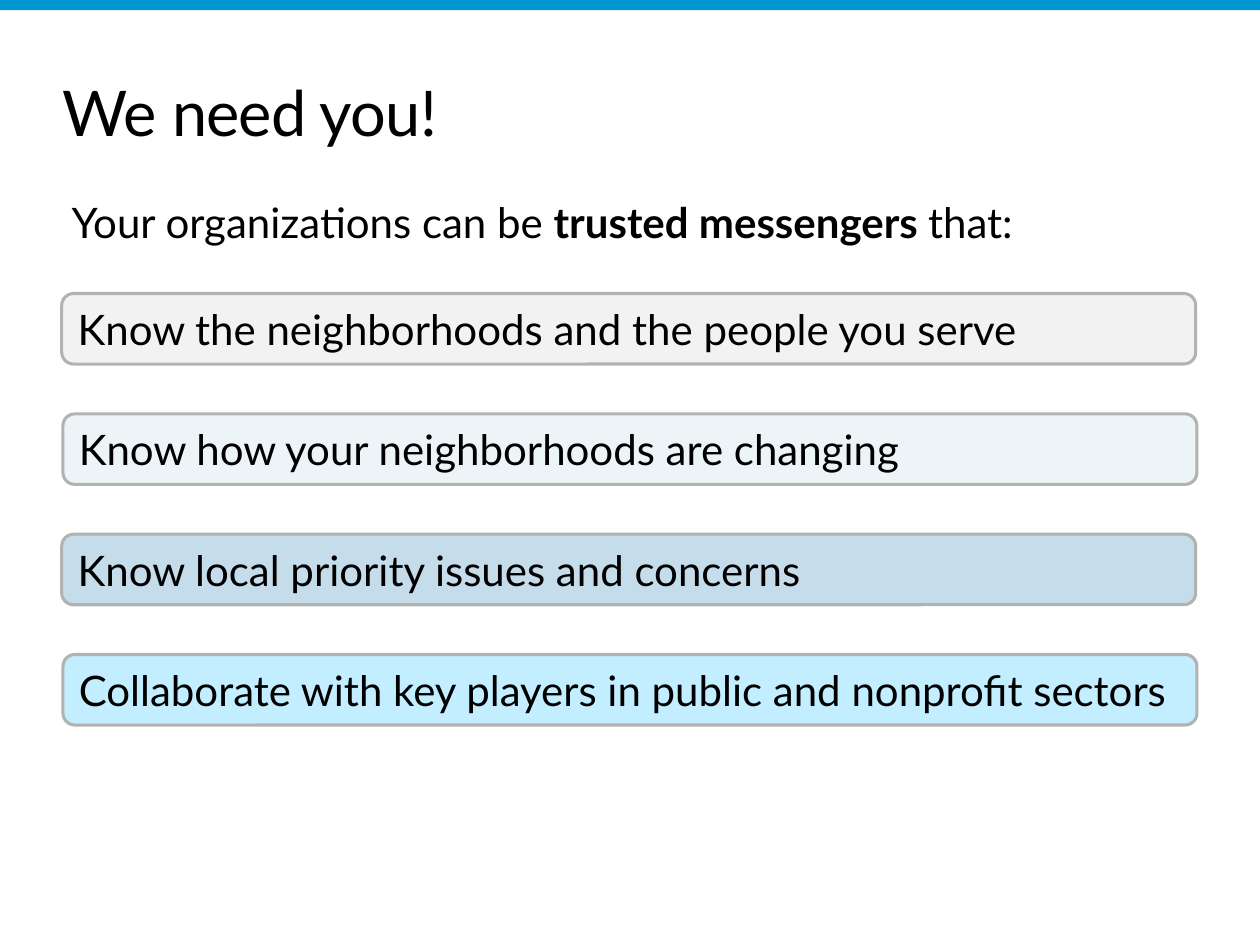
from dataclasses import dataclass

from pptx import Presentation
from pptx.dml.color import RGBColor
from pptx.enum.shapes import MSO_SHAPE
from pptx.enum.text import MSO_ANCHOR, PP_ALIGN
from pptx.util import Inches, Pt

RECT = MSO_SHAPE.RECTANGLE
ROUND = MSO_SHAPE.ROUNDED_RECTANGLE
TOP = MSO_ANCHOR.TOP
MIDDLE = MSO_ANCHOR.MIDDLE
LEFT = PP_ALIGN.LEFT


@dataclass(frozen=True)
class Theme:
    font: str = "Lato"
    ink: str = "000000"
    band: str = "0096D2"
    edge: str = "B1B3B1"
    title: float = 36
    body: float = 24
    line: float = 1.75


@dataclass(frozen=True)
class Card:
    text: str
    fill: str
    left: float


THEME = Theme()
CARD_TOP = 2.33
CARD_STEP = 0.955
CARDS = [
    Card("Know the neighborhoods and the people you serve", "F2F2F2", 0.49),
    Card("Know how your neighborhoods are changing", "ECF4F8", 0.5),
    Card("Know local priority issues and concerns", "C5DDEB", 0.49),
    Card("Collaborate with key players in public and nonprofit sectors", "C3EEFF", 0.5),
]


def write(shape, *parts: str, size: float = THEME.body, bold: str = "",
          anchor=TOP, inset: bool = True, space: int = 0) -> None:
    frame = shape.text_frame
    frame.word_wrap = True
    frame.vertical_anchor = anchor
    if not inset:
        frame.margin_left = frame.margin_right = 0
        frame.margin_top = frame.margin_bottom = 0
    para = frame.paragraphs[0]
    para.alignment = LEFT
    for part in parts:
        run = para.add_run()
        run.text = part
        font = run.font
        font.name = THEME.font
        font.size = Pt(size)
        font.bold = part == bold
        font.color.rgb = RGBColor.from_string(THEME.ink)
        if space:
            run._r.get_or_add_rPr().set("spc", str(space))


def add_text(slide, left: float, top: float, width: float, height: float):
    return slide.shapes.add_textbox(
        Inches(left), Inches(top), Inches(width), Inches(height))


def add_box(slide, kind, left: float, top: float, width: float,
            height: float, fill: str, edge: str = ""):
    box = slide.shapes.add_shape(
        kind, Inches(left), Inches(top), Inches(width), Inches(height))
    box.shadow.inherit = False
    box.fill.solid()
    box.fill.fore_color.rgb = RGBColor.from_string(fill)
    if edge:
        box.line.color.rgb = RGBColor.from_string(edge)
        box.line.width = Pt(THEME.line)
    else:
        box.line.fill.background()
    return box


def add_card(slide, card: Card, top: float) -> None:
    box = add_box(slide, ROUND, card.left, top, 9, 0.56, card.fill, THEME.edge)
    write(box, card.text, anchor=MIDDLE)


def main() -> None:
    deck = Presentation()
    deck.slide_width = Inches(10)
    deck.slide_height = Inches(7.5)
    slide = deck.slides.add_slide(deck.slide_layouts[6])

    add_box(slide, RECT, 0, 0, 10, 0.08, THEME.band)
    title = add_text(slide, 0.5, 0.58, 9, 0.62)
    write(title, "We need you!", size=THEME.title, inset=False, space=-40)
    lead = add_text(slide, 0.47, 1.51, 8.94, 0.5)
    strong = "trusted messengers "
    write(lead, "Your organizations can be ", strong, "that:", bold=strong)

    for row, card in enumerate(CARDS):
        add_card(slide, card, CARD_TOP + row * CARD_STEP)
    deck.save("out.pptx")


if __name__ == "__main__":
    main()
